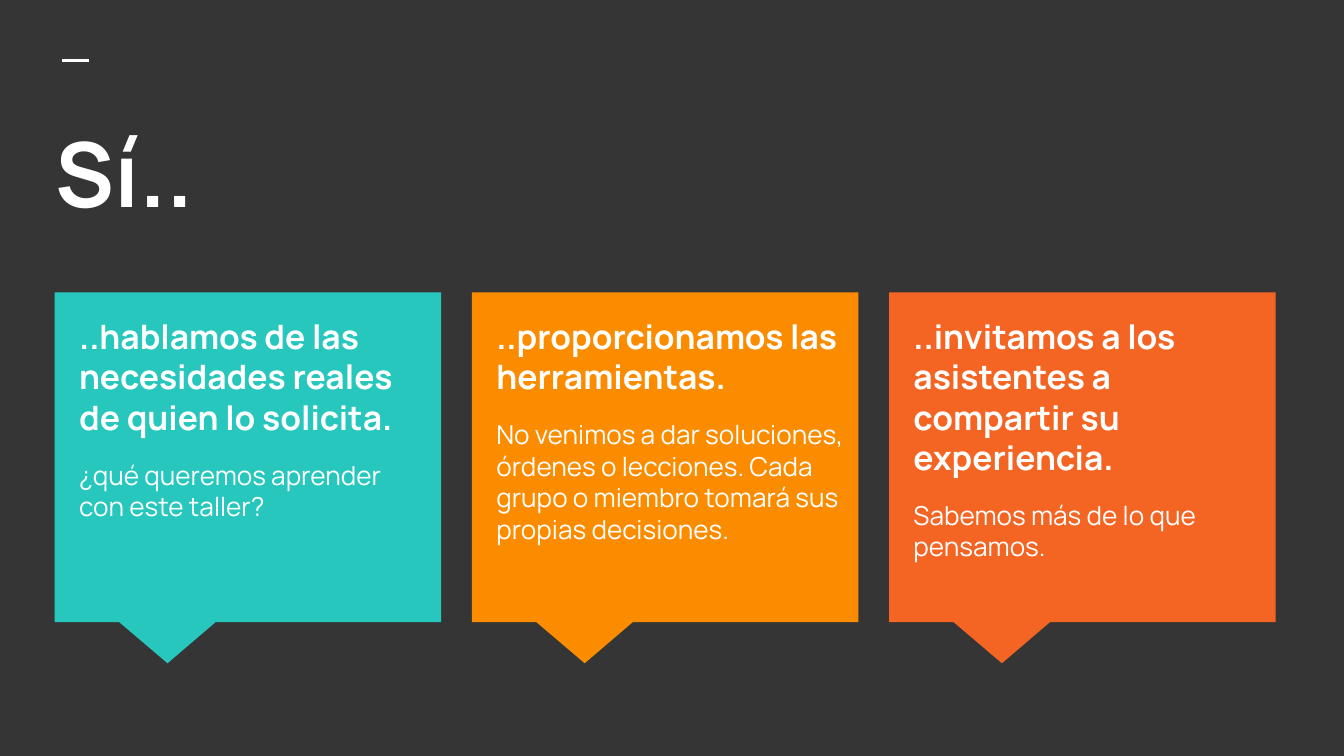
from dataclasses import dataclass

from lxml import etree
from pptx import Presentation
from pptx.dml.color import RGBColor
from pptx.enum.shapes import MSO_CONNECTOR, MSO_SHAPE
from pptx.enum.text import MSO_ANCHOR
from pptx.oxml.ns import qn
from pptx.util import Pt

CALLOUT = MSO_SHAPE.RECTANGULAR_CALLOUT
STRAIGHT = MSO_CONNECTOR.STRAIGHT
TOP = MSO_ANCHOR.TOP


@dataclass(frozen=True)
class Theme:
    font: str = "Manrope"
    background: str = "353535"
    white: str = "FFFFFF"
    teal: str = "27C7BD"
    amber: str = "FB8C00"
    orange: str = "F46524"
    title_size: int = 48
    heading_size: int = 18
    body_size: int = 14


theme = Theme()


def add_text(paragraph, text, size, bold=False, space=0):
    paragraph.space_before = paragraph.space_after = Pt(space)
    run = paragraph.add_run()
    run.text = text
    run.font.name = theme.font
    run.font.size = Pt(size)
    run.font.bold = bold
    run.font.color.rgb = RGBColor.from_string(theme.white)


def add_frame(left, top, width, height):
    frame = slide.shapes.add_textbox(Pt(left), Pt(top), Pt(width), Pt(height)).text_frame
    frame.word_wrap = True
    frame.vertical_anchor = TOP
    frame.margin_left = frame.margin_right = Pt(7.2)
    frame.margin_top = frame.margin_bottom = Pt(7.2)
    return frame


presentation = Presentation()
presentation.slide_width = Pt(720)
presentation.slide_height = Pt(405)
slide = presentation.slides.add_slide(presentation.slide_layouts[6])
slide.background.fill.solid()
slide.background.fill.fore_color.rgb = RGBColor.from_string(theme.background)

dash = slide.shapes.add_connector(STRAIGHT, Pt(33.5), Pt(32.5), Pt(47.9), Pt(32.5))
dash.line.color.rgb = RGBColor.from_string(theme.white)
dash.line.width = Pt(1.5)
etree.SubElement(dash._element.spPr, qn("a:effectLst"))

title_frame = add_frame(22.5, 56.2, 679, 80.6)
add_text(title_frame.paragraphs[0], "Sí..", theme.title_size, bold=True)

cards = [
    (theme.teal, 195, "..hablamos de las necesidades reales de quien lo solicita.",
     "¿qué queremos aprender con este taller?"),
    (theme.amber, 201, "..proporcionamos las herramientas.",
     "No venimos a dar soluciones, órdenes o lecciones. "
     "Cada grupo o miembro tomará sus propias decisiones."),
    (theme.orange, 195, "..invitamos a los asistentes a compartir su experiencia.",
     "Sabemos más de lo que pensamos."),
]
card_left, card_top, card_width, card_height, card_pitch = 29.3, 156.7, 207, 176.6, 223.5

for index, (color, text_width, heading, body) in enumerate(cards):
    left = card_left + index * card_pitch
    callout = slide.shapes.add_shape(
        CALLOUT, Pt(left), Pt(card_top), Pt(card_width), Pt(card_height))
    callout.adjustments[0] = -0.208
    callout.adjustments[1] = 0.625
    callout.shadow.inherit = False
    callout.fill.solid()
    callout.fill.fore_color.rgb = RGBColor.from_string(color)
    callout.line.fill.background()

    frame = add_frame(left + 6, card_top + 5.3, text_width, 157.7)
    add_text(frame.paragraphs[0], heading, theme.heading_size, bold=True)
    add_text(frame.add_paragraph(), body, theme.body_size, space=12)

presentation.save("out.pptx")
